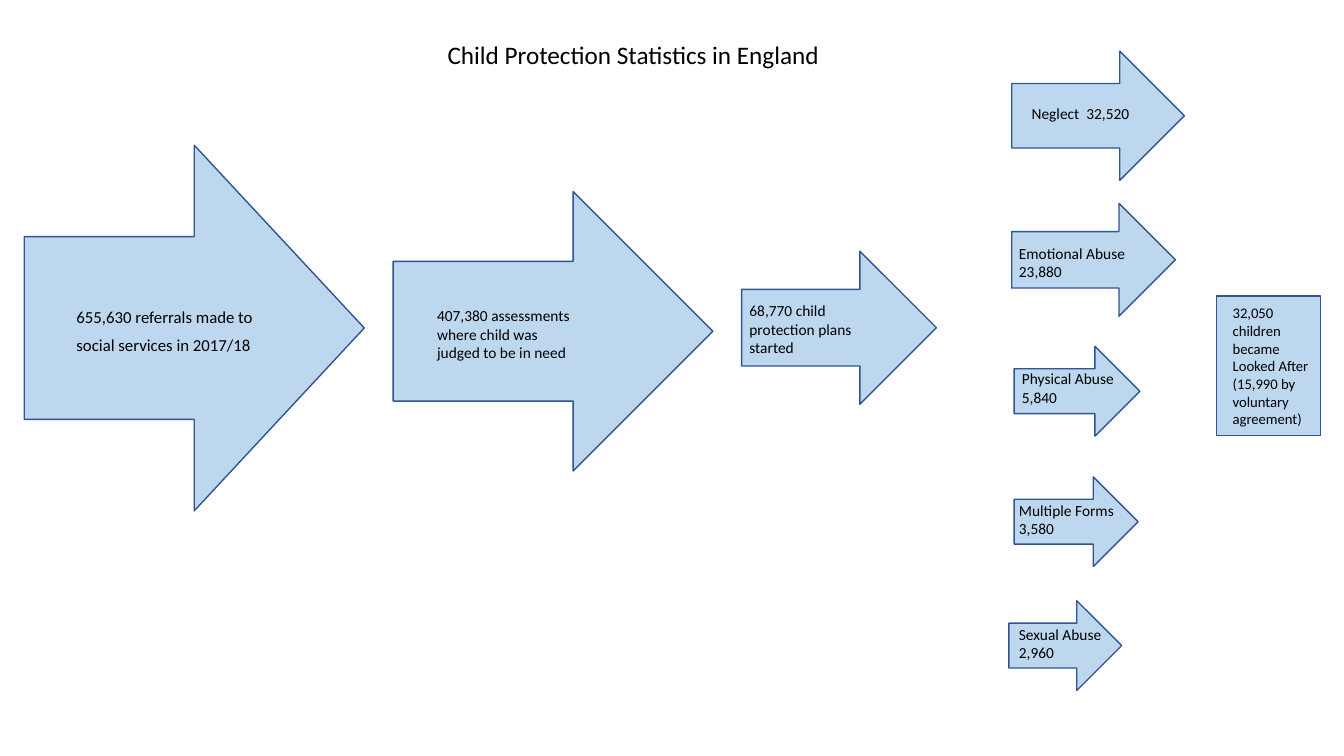
"""Build the slide on child protection statistics in England."""
from dataclasses import dataclass
from typing import Optional

from pptx import Presentation
from pptx.dml.color import RGBColor
from pptx.enum import shapes, text
from pptx.util import Pt

COLOURS = {"fill": "BDD7EE", "outline": "325491", "ink": "000000"}
ARROW = shapes.MSO_SHAPE.RIGHT_ARROW
RECTANGLE = shapes.MSO_SHAPE.RECTANGLE


@dataclass(frozen=True)
class Box:
    """Position and size in points."""
    left: float
    top: float
    width: float
    height: float

    def lengths(self) -> tuple:
        """Return the four values as lengths."""
        return Pt(self.left), Pt(self.top), Pt(self.width), Pt(self.height)


@dataclass(frozen=True)
class Stage:
    """A figure's outline and its label."""
    outline: Box
    label: Box
    wording: str
    size: float = 11
    spacing: Optional[float] = None
    kind: shapes.MSO_SHAPE = ARROW
    filled_label: bool = False


STAGES = [
    Stage(Box(17.3, 103.7, 242.9, 261.2), Box(47.5, 209.9, 154.8, 58.3),
          "655,630 referrals made to social services in 2017/18", size=12, spacing=20),
    Stage(Box(280.8, 136.8, 228.4, 199.6), Box(305.1, 215.3, 116.6, 47.5),
          "407,380 assessments where child was judged to be in need"),
    Stage(Box(529.7, 179.4, 139.2, 109.4), Box(528.2, 211.7, 111.6, 47.5),
          "68,770 child protection plans started"),
    Stage(Box(722.7, 36.6, 123.3, 92.2), Box(729.8, 70.6, 88.6, 20.9),
          "Neglect  32,520", filled_label=True),
    Stage(Box(722.7, 145.3, 116.9, 80.6), Box(720.7, 170.6, 106.6, 33.8),
          "Emotional Abuse 23,880"),
    Stage(Box(724.4, 247.4, 89.8, 64.1), Box(722.9, 260.4, 88.6, 33.8),
          "Physical Abuse 5,840"),
    Stage(Box(724.4, 340.6, 88.6, 64.1), Box(720.7, 354.2, 106.6, 33.8),
          "Multiple Forms 3,580"),
    Stage(Box(720.6, 429.1, 80.6, 64.1), Box(720.7, 442.8, 88.6, 33.8),
          "Sexual Abuse 2,960"),
    Stage(Box(869, 211.5, 74.2, 99.7), Box(873.4, 213.8, 78.5, 96.5),
          "32,050 children became Looked After (15,990 by voluntary agreement)",
          size=10.5, kind=RECTANGLE),
]


def colour(name: str) -> RGBColor:
    """Look up a colour by its role."""
    return RGBColor.from_string(COLOURS[name])


def write(frame, wording: str, *, size: float = 11,
          spacing: Optional[float] = None) -> None:
    """Put formatted, left-aligned text into a text frame."""
    frame.word_wrap = True
    frame.auto_size = text.MSO_AUTO_SIZE.NONE
    frame.vertical_anchor = text.MSO_ANCHOR.TOP
    paragraph = frame.paragraphs[0]
    paragraph.alignment = text.PP_ALIGN.LEFT
    if spacing:
        paragraph.line_spacing = Pt(spacing)
    run = paragraph.add_run()
    run.text = wording
    run.font.name = "Calibri"
    run.font.size = Pt(size)
    run.font.color.rgb = colour("ink")


def paint(shape) -> None:
    """Fill a shape in the slide's pale blue."""
    shape.fill.solid()
    shape.fill.fore_color.rgb = colour("fill")


def draw_stage(slide, stage: Stage) -> None:
    """Draw a figure's outline with its label on top."""
    figure = slide.shapes.add_shape(stage.kind, *stage.outline.lengths())
    figure.shadow.inherit = False
    paint(figure)
    figure.line.color.rgb = colour("outline")
    figure.line.width = Pt(1)
    label = slide.shapes.add_textbox(*stage.label.lengths())
    if stage.filled_label:
        paint(label)
    write(label.text_frame, stage.wording, size=stage.size, spacing=stage.spacing)


def main() -> None:
    """Build and save the presentation."""
    deck = Presentation()
    deck.slide_width, deck.slide_height = Pt(960), Pt(540)
    slide = deck.slides.add_slide(deck.slide_layouts[5])
    heading = slide.shapes.title
    heading.left, heading.top, heading.width, heading.height = Box(
        312.5, 24.5, 461.5, 28.8).lengths()
    write(heading.text_frame, "Child Protection Statistics in England", size=18)
    for stage in STAGES:
        draw_stage(slide, stage)
    deck.save("out.pptx")


if __name__ == "__main__":
    main()
